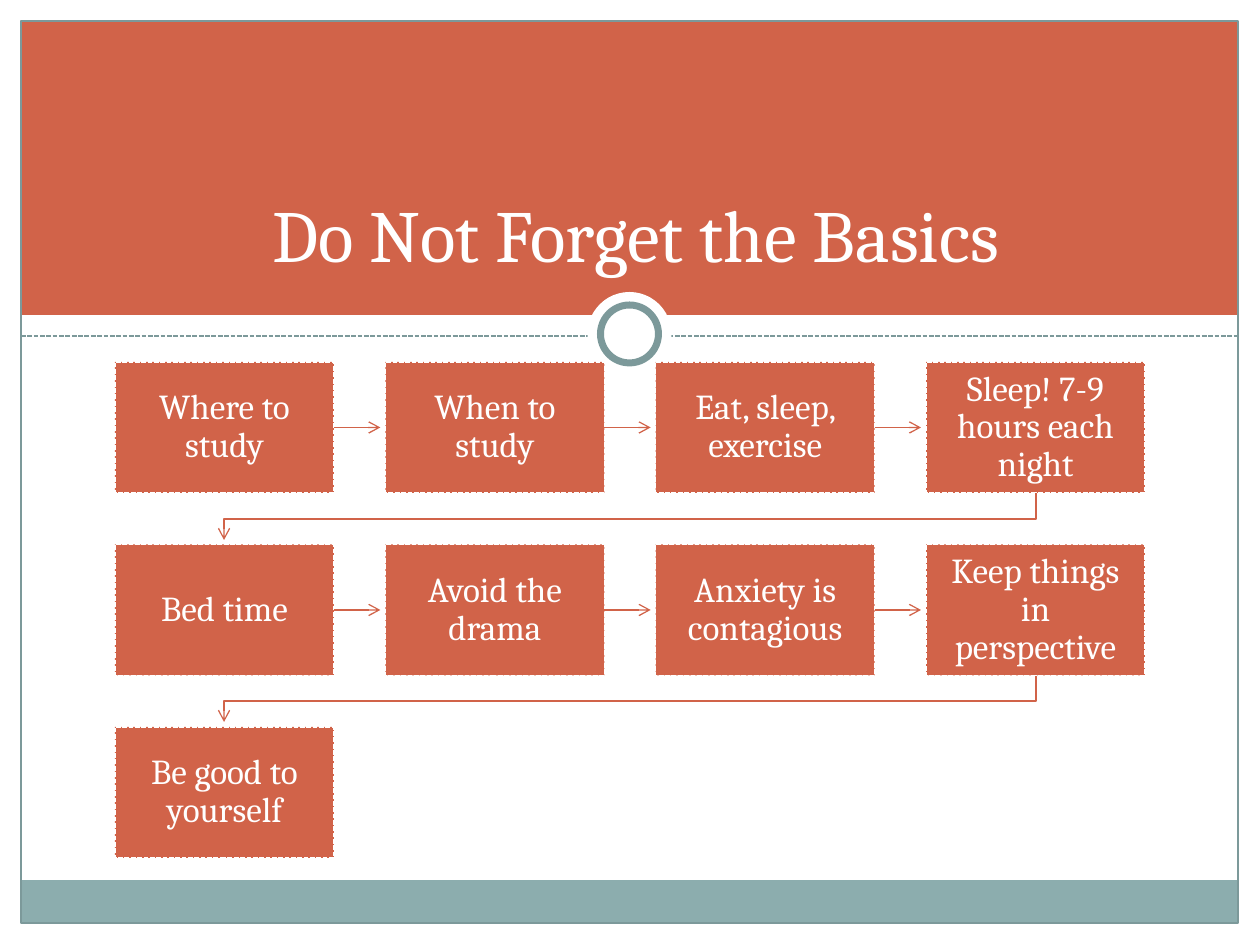
import pptx
import pptx.dml.color
import pptx.enum.dml
import pptx.enum.shapes
import pptx.enum.text
import pptx.oxml
import pptx.oxml.ns
import pptx.util

RGBColor = pptx.dml.color.RGBColor
SHAPE = pptx.enum.shapes.MSO_SHAPE
DASH = pptx.enum.dml.MSO_LINE.SQUARE_DOT
ANCHOR = pptx.enum.text.MSO_ANCHOR

WHITE = RGBColor(0xFF, 0xFF, 0xFF)
ORANGE = RGBColor(0xD1, 0x63, 0x49)
TEAL = RGBColor(0x8C, 0xAD, 0xAE)
DARK_TEAL = RGBColor(0x7C, 0x99, 0x9A)

FONT = "Cambria"
SCALE = 914400 / 126
COLUMNS = 4
STEPS = [
    "Where to study",
    "When to study",
    "Eat, sleep, exercise",
    "Sleep! 7-9 hours each night",
    "Bed time",
    "Avoid the drama",
    "Anxiety is contagious",
    "Keep things in perspective",
    "Be good to yourself",
]


def px(length):
    return pptx.util.Emu(round(length * SCALE))


def set_line(line, color, width, dash=None):
    line.color.rgb = color
    line.width = pptx.util.Pt(width)
    if dash is not None:
        line.dash_style = dash


def add_box(slide, box, kind=SHAPE.RECTANGLE, fill=None, line=None, width=0.75, dash=None):
    shape = slide.shapes.add_shape(kind, *map(px, box))
    shape.shadow.inherit = False
    if fill is None:
        shape.fill.background()
    else:
        shape.fill.solid()
        shape.fill.fore_color.rgb = fill
    if line is None:
        shape.line.fill.background()
    else:
        set_line(shape.line, line, width, dash)
    return shape


def add_line(slide, start, end, color, width, dash=None):
    connector = slide.shapes.add_connector(
        pptx.enum.shapes.MSO_CONNECTOR.STRAIGHT, *map(px, start + end)
    )
    set_line(connector.line, color, width, dash)
    properties = connector.element.find(pptx.oxml.ns.qn("p:spPr"))
    properties.append(pptx.oxml.parse_xml(f"<a:effectLst {pptx.oxml.ns.nsdecls('a')}/>"))
    return connector


def add_arrowhead(shape):
    line = shape.element.find(".//" + pptx.oxml.ns.qn("a:ln"))
    line.append(
        pptx.oxml.parse_xml(f'<a:tailEnd {pptx.oxml.ns.nsdecls("a")} type="arrow"/>')
    )


def write_text(shape, text, size, anchor, spacing=1.0, margin=11):
    frame = shape.text_frame
    frame.word_wrap = True
    frame.auto_size = pptx.enum.text.MSO_AUTO_SIZE.NONE
    frame.vertical_anchor = anchor
    frame.margin_left = frame.margin_right = px(margin)
    frame.margin_top = frame.margin_bottom = px(margin)
    paragraph = frame.paragraphs[0]
    paragraph.alignment = pptx.enum.text.PP_ALIGN.CENTER
    paragraph.line_spacing = spacing
    run = paragraph.add_run()
    run.text = text
    run.font.name = FONT
    run.font.size = pptx.util.Pt(size)
    run.font.color.rgb = WHITE


def add_circle(slide, center, diameter, **style):
    x, y = center
    box = (x - diameter / 2, y - diameter / 2, diameter, diameter)
    return add_box(slide, box, SHAPE.OVAL, fill=WHITE, **style)


def add_background(slide, box):
    left, top, width, height = box
    header_height, footer_height = 294, 43
    add_box(slide, (left, top, width, header_height), fill=ORANGE)
    add_box(slide, (left, top + height - footer_height, width, footer_height), fill=TEAL)
    add_box(slide, box, line=DARK_TEAL)
    rule = top + header_height + 21
    add_line(slide, (left, rule), (left + width, rule), DARK_TEAL, 0.9, DASH)
    center = (left + width / 2, rule - 2)
    add_circle(slide, center, 84)
    add_circle(slide, center, 58, line=DARK_TEAL, width=4)


def add_title(slide, box, text):
    title = slide.shapes.title
    title.left, title.top, title.width, title.height = map(px, box)
    write_text(title, text, 42, ANCHOR.BOTTOM, margin=6)
    title.element.getparent().append(title.element)


def add_return_arrow(slide, start, end, turn):
    builder = slide.shapes.build_freeform(*start, scale=SCALE)
    builder.add_line_segments([(start[0], turn), (end[0], turn), end], close=False)
    arrow = builder.convert_to_shape()
    arrow.shadow.inherit = False
    arrow.fill.background()
    set_line(arrow.line, ORANGE, 0.75)
    add_arrowhead(arrow)


def add_flow(slide, box, steps):
    left, top, width, height = box
    step_width, step_height, clearance = 219, 131, 5
    rows = -(-len(steps) // COLUMNS)
    column_pitch = (width - step_width) / (COLUMNS - 1)
    row_pitch = (height - step_height) / (rows - 1)
    for index, text in enumerate(steps):
        row, column = divmod(index, COLUMNS)
        x = left + column * column_pitch
        y = top + row * row_pitch
        right, bottom = x + step_width, y + step_height
        shape = add_box(slide, (x, y, step_width, step_height),
                        fill=ORANGE, line=WHITE, width=0.9, dash=DASH)
        write_text(shape, text, 20, ANCHOR.MIDDLE, spacing=0.9)
        if index == len(steps) - 1:
            continue
        if column < COLUMNS - 1:
            middle = y + step_height / 2
            end = (x + column_pitch - clearance, middle)
            add_arrowhead(add_line(slide, (right, middle), end, ORANGE, 0.75))
        else:
            start = (x + step_width / 2, bottom)
            end = (left + step_width / 2, y + row_pitch - clearance)
            add_return_arrow(slide, start, end, (bottom + y + row_pitch) / 2)


def main():
    presentation = pptx.Presentation()
    presentation.slide_width = px(1260)
    presentation.slide_height = px(945)
    slide = presentation.slides.add_slide(presentation.slide_layouts[5])
    add_background(slide, (21, 21, 1217, 902))
    add_title(slide, (100, 73, 1071, 210), "Do Not Forget the Basics")
    add_flow(slide, (115, 362, 1030, 496), STEPS)
    presentation.save("out.pptx")


if __name__ == "__main__":
    main()
